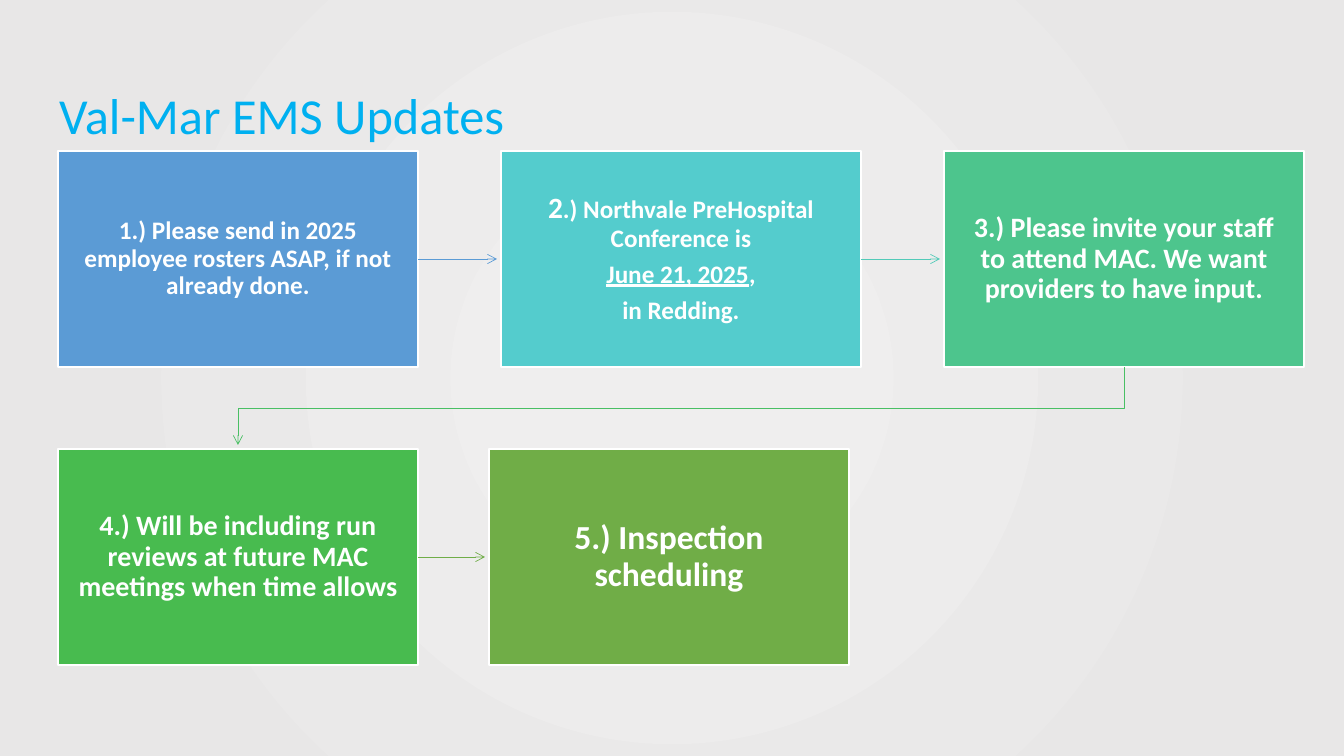
import pptx
import pptx.dml.color
import pptx.enum.shapes
import pptx.enum.text
import pptx.oxml
import pptx.oxml.ns
import pptx.util

EMU_PER_PIXEL = 914400 / 100.8
CARD_WIDTH, CARD_HEIGHT = 360, 216
LEFT, TOP = 58, 151
COLUMN_STEP, ROW_STEP = 443, 298
LAST_CARD_LEFT = 489
ARROW_GAP = 4

CARDS = [
    (LEFT, TOP, "5B9BD5", 18,
     [[("1.) Please send in 2025 employee rosters ASAP, if not already done.", {})]]),
    (LEFT + COLUMN_STEP, TOP, "54CCCD", 18,
     [[("2", {"size": pptx.util.Pt(21)}), (".) Northvale PreHospital Conference is", {})],
      [("June 21, 2025", {"underline": True}), (",", {})],
      [("in Redding.", {})]]),
    (LEFT + 2 * COLUMN_STEP, TOP, "4DC58D", 20,
     [[("3.) Please invite your staff to attend MAC. We want providers to have input.", {})]]),
    (LEFT, TOP + ROW_STEP, "48BB4F", 20,
     [[("4.) Will be including run reviews at future MAC meetings when time allows", {})]]),
    (LAST_CARD_LEFT, TOP + ROW_STEP, "70AD47", 24,
     [[("5.) Inspection scheduling", {})]]),
]
STRAIGHT_ARROWS = [(0, 1, "5B9BD5"), (1, 2, "52CAB8"), (3, 4, "70AD47")]


def px(value):
    return pptx.util.Emu(round(value * EMU_PER_PIXEL))


def color(hex_value):
    return pptx.dml.color.RGBColor.from_string(hex_value)


def paint_background(slide):
    fill = slide.background.fill
    fill.gradient()
    for stop, position, hex_value in zip(fill.gradient_stops, (0.1, 0.85), ("EFEEEE", "E8E7E7")):
        stop.position = position
        stop.color.rgb = color(hex_value)
    gradient = slide.background._cSld.find(".//" + pptx.oxml.ns.qn("a:gradFill"))
    gradient.remove(gradient.find(pptx.oxml.ns.qn("a:lin")))
    gradient.append(pptx.oxml.parse_xml(
        '<a:path %s path="circle"><a:fillToRect l="50000" t="50000" r="50000" b="50000"/></a:path>'
        % pptx.oxml.ns.nsdecls("a")))


def add_title(slide, left, top, width, height):
    title = slide.shapes.title
    title.left, title.top, title.width, title.height = map(px, (left, top, width, height))
    frame = title.text_frame
    frame.text = "Val-Mar EMS Updates"
    frame.auto_size = pptx.enum.text.MSO_AUTO_SIZE.NONE
    frame.vertical_anchor = pptx.enum.text.MSO_ANCHOR.TOP
    paragraph = frame.paragraphs[0]
    paragraph.alignment = pptx.enum.text.PP_ALIGN.LEFT
    paragraph.font.name = "Calibri"
    paragraph.font.size = pptx.util.Pt(36)
    paragraph.font.color.rgb = color("00B0F0")


def add_card(slide, left, top, fill, size, lines):
    card = slide.shapes.add_shape(
        pptx.enum.shapes.MSO_SHAPE.RECTANGLE,
        px(left), px(top), px(CARD_WIDTH), px(CARD_HEIGHT))
    card.shadow.inherit = False
    card.fill.solid()
    card.fill.fore_color.rgb = color(fill)
    card.line.color.rgb = color("FFFFFF")
    card.line.width = pptx.util.Pt(1)
    frame = card.text_frame
    frame.word_wrap = True
    frame.vertical_anchor = pptx.enum.text.MSO_ANCHOR.MIDDLE
    frame.margin_left = frame.margin_right = px(17)
    frame.margin_top = frame.margin_bottom = px(18)
    for index, runs in enumerate(lines):
        paragraph = frame.add_paragraph() if index else frame.paragraphs[0]
        paragraph.alignment = pptx.enum.text.PP_ALIGN.CENTER
        paragraph.line_spacing = 0.9
        paragraph.space_after = pptx.util.Pt(size * 0.35)
        paragraph.font.name = "Calibri"
        paragraph.font.size = pptx.util.Pt(size)
        paragraph.font.bold = True
        paragraph.font.color.rgb = color("FFFFFF")
        for text, style in runs:
            run = paragraph.add_run()
            run.text = text
            for name, value in style.items():
                setattr(run.font, name, value)
    return card


def style_arrow(arrow, hex_value):
    arrow.line.color.rgb = color(hex_value)
    arrow.line.width = pptx.util.Pt(0.5)
    arrow.line._get_or_add_ln().append(pptx.oxml.parse_xml(
        '<a:tailEnd %s type="arrow"/>' % pptx.oxml.ns.nsdecls("a")))
    arrow._element.spPr.append(pptx.oxml.parse_xml(
        "<a:effectLst %s/>" % pptx.oxml.ns.nsdecls("a")))


def add_straight_arrow(slide, start, end, hex_value):
    middle = start.top + start.height // 2
    arrow = slide.shapes.add_connector(
        pptx.enum.shapes.MSO_CONNECTOR.STRAIGHT,
        start.left + start.width, middle, end.left - px(ARROW_GAP), middle)
    arrow.begin_connect(start, 3)
    style_arrow(arrow, hex_value)


def add_return_arrow(slide, start, end, hex_value):
    start_x = start.left + start.width // 2
    end_x = end.left + end.width // 2
    bottom = start.top + start.height
    middle = (bottom + end.top) // 2
    builder = slide.shapes.build_freeform(start_x, bottom)
    builder.add_line_segments(
        [(start_x, middle), (end_x, middle), (end_x, end.top - px(ARROW_GAP))], close=False)
    arrow = builder.convert_to_shape()
    arrow.fill.background()
    style_arrow(arrow, hex_value)


def add_process(slide):
    cards = [add_card(slide, *card) for card in CARDS]
    for start, end, hex_value in STRAIGHT_ARROWS:
        add_straight_arrow(slide, cards[start], cards[end], hex_value)
    add_return_arrow(slide, cards[2], cards[3], "49BF64")


def main():
    presentation = pptx.Presentation()
    presentation.slide_width, presentation.slide_height = px(1344), px(756)
    slide = presentation.slides.add_slide(presentation.slide_layouts[5])
    paint_background(slide)
    add_title(slide, 49, 79, 866, 72)
    add_process(slide)
    presentation.save("out.pptx")


if __name__ == "__main__":
    main()
